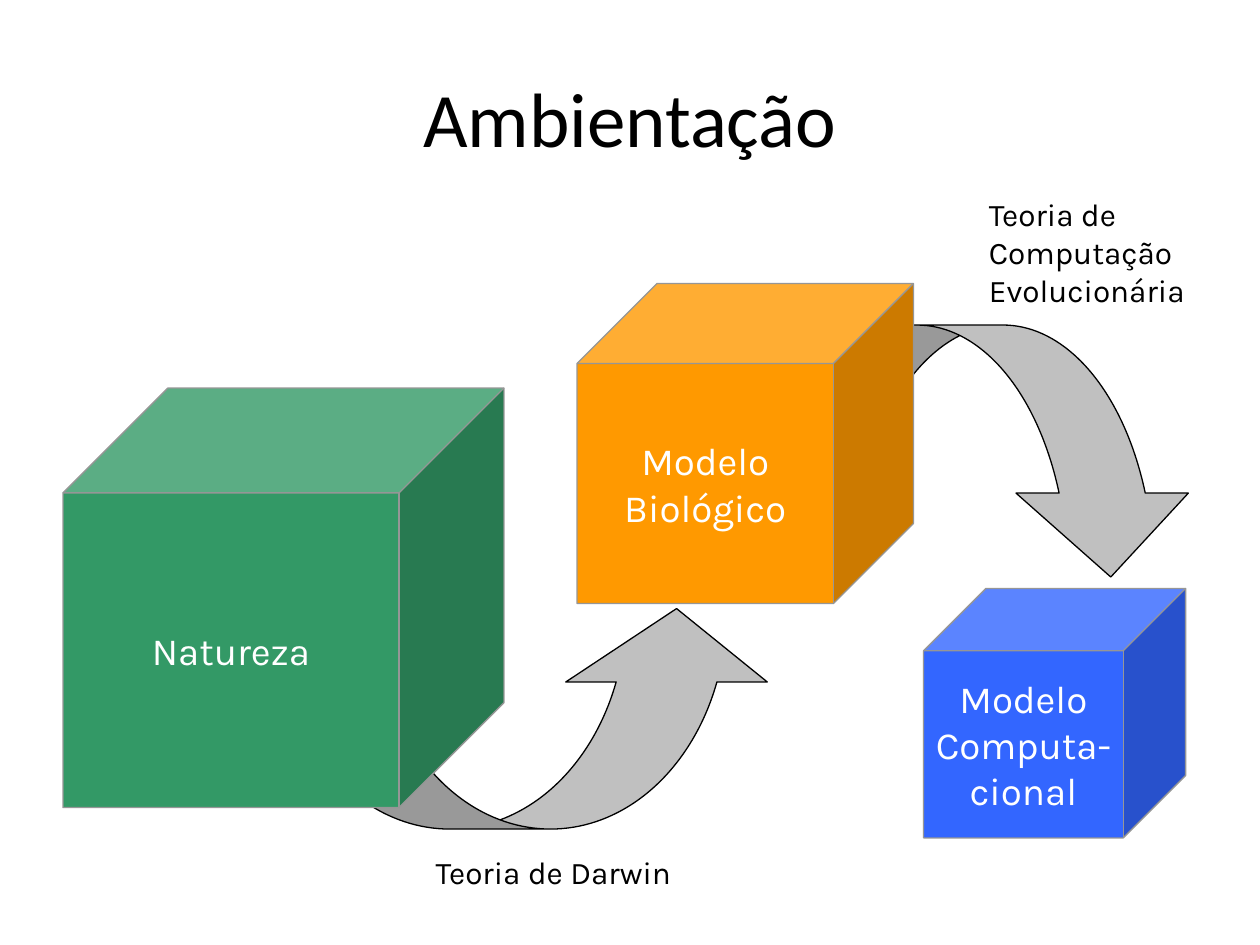
"""Builds a slide of three cubes joined by curved arrows."""
from pptx import Presentation
from pptx.dml.color import RGBColor
from pptx.enum.shapes import MSO_SHAPE
from pptx.enum.text import MSO_ANCHOR, MSO_AUTO_SIZE, PP_ALIGN
from pptx.util import Inches, Pt

COLORS = {
    "black": "000000",
    "white": "FFFFFF",
    "edge": "969696",
    "arrow": "C0C0C0",
    "nature": "339966",
    "biology": "FF9900",
    "computing": "3366FF",
}
TITLE_FORMAT = {"size": Pt(44), "name": "Calibri"}
CUBE_FORMAT = {"size": Pt(22), "name": "Karla"}
LABEL_FORMAT = {"size": Pt(18), "name": "Karla"}


def color(name):
    """Return the named colour."""
    return RGBColor.from_string(COLORS[name])


def write_text(frame, lines, text_format, color_name, align):
    """Write one paragraph for each line in the given format."""
    for index, line in enumerate(lines):
        para = frame.add_paragraph() if index else frame.paragraphs[0]
        para.alignment = align
        span = para.add_run()
        span.text = line
        for name, value in text_format.items():
            setattr(span.font, name, value)
        span.font.color.rgb = color(color_name)


def add_title(page, text):
    """Place and fill the title placeholder."""
    title = page.shapes.title
    places = {"left": 0.5, "top": 0.3, "width": 9, "height": 1.25}
    for name, value in places.items():
        setattr(title, name, Inches(value))
    title.text_frame.vertical_anchor = MSO_ANCHOR.MIDDLE
    write_text(title.text_frame, [text], TITLE_FORMAT, "black", PP_ALIGN.CENTER)


def add_figure(page, kind, place, fill, line, adjustments):
    """Add a filled and outlined preset shape."""
    figure = page.shapes.add_shape(kind, *map(Inches, place))
    figure.shadow.inherit = False
    figure.fill.solid()
    figure.fill.fore_color.rgb = color(fill)
    figure.line.color.rgb = color(line)
    figure.line.width = Pt(0.75)
    for index, value in enumerate(adjustments):
        figure.adjustments[index] = value
    return figure


def add_cube(page, place, fill, lines):
    """Add a cube with centred white text on its front."""
    cube = add_figure(page, MSO_SHAPE.CUBE, place, fill, "edge", [0.25])
    cube.text_frame.word_wrap = False
    cube.text_frame.vertical_anchor = MSO_ANCHOR.MIDDLE
    write_text(cube.text_frame, lines, CUBE_FORMAT, "white", PP_ALIGN.CENTER)


def add_curved_arrow(page, kind, place, band):
    """Add a curved arrow whose head is twice as wide as its band."""
    add_figure(page, kind, place, "arrow", "black", [band, 2 * band, 0.333])


def add_label(page, place, text, wrap):
    """Add a text box that names a theory."""
    box = page.shapes.add_textbox(*map(Inches, place))
    box.text_frame.word_wrap = wrap
    box.text_frame.auto_size = MSO_AUTO_SIZE.SHAPE_TO_FIT_TEXT
    write_text(box.text_frame, [text], LABEL_FORMAT, "black", PP_ALIGN.LEFT)


def main():
    """Build and save the deck."""
    deck = Presentation()
    deck.slide_width, deck.slide_height = Inches(10), Inches(7.5)
    page = deck.slides.add_slide(deck.slide_layouts[5])
    add_title(page, "Ambientação")
    add_cube(page, (7.33, 4.67, 2.08, 1.98), "computing",
             ["Modelo", "Computa-", "cional"])
    add_curved_arrow(page, MSO_SHAPE.CURVED_UP_ARROW, (2.17, 4.83, 4, 1.75), 0.457)
    add_cube(page, (0.5, 3.08, 3.5, 3.33), "nature", ["Natureza"])
    add_curved_arrow(page, MSO_SHAPE.CURVED_DOWN_ARROW, (6.08, 2.58, 3.42, 2), 0.342)
    add_cube(page, (4.58, 2.25, 2.67, 2.54), "biology", ["Modelo", "Biológico"])
    add_label(page, (3.36, 6.72, 2.09, 0.4), "Teoria de Darwin", False)
    add_label(page, (7.75, 1.5, 2.06, 1), "Teoria de Computação Evolucionária", True)
    deck.save("out.pptx")


if __name__ == "__main__":
    main()
